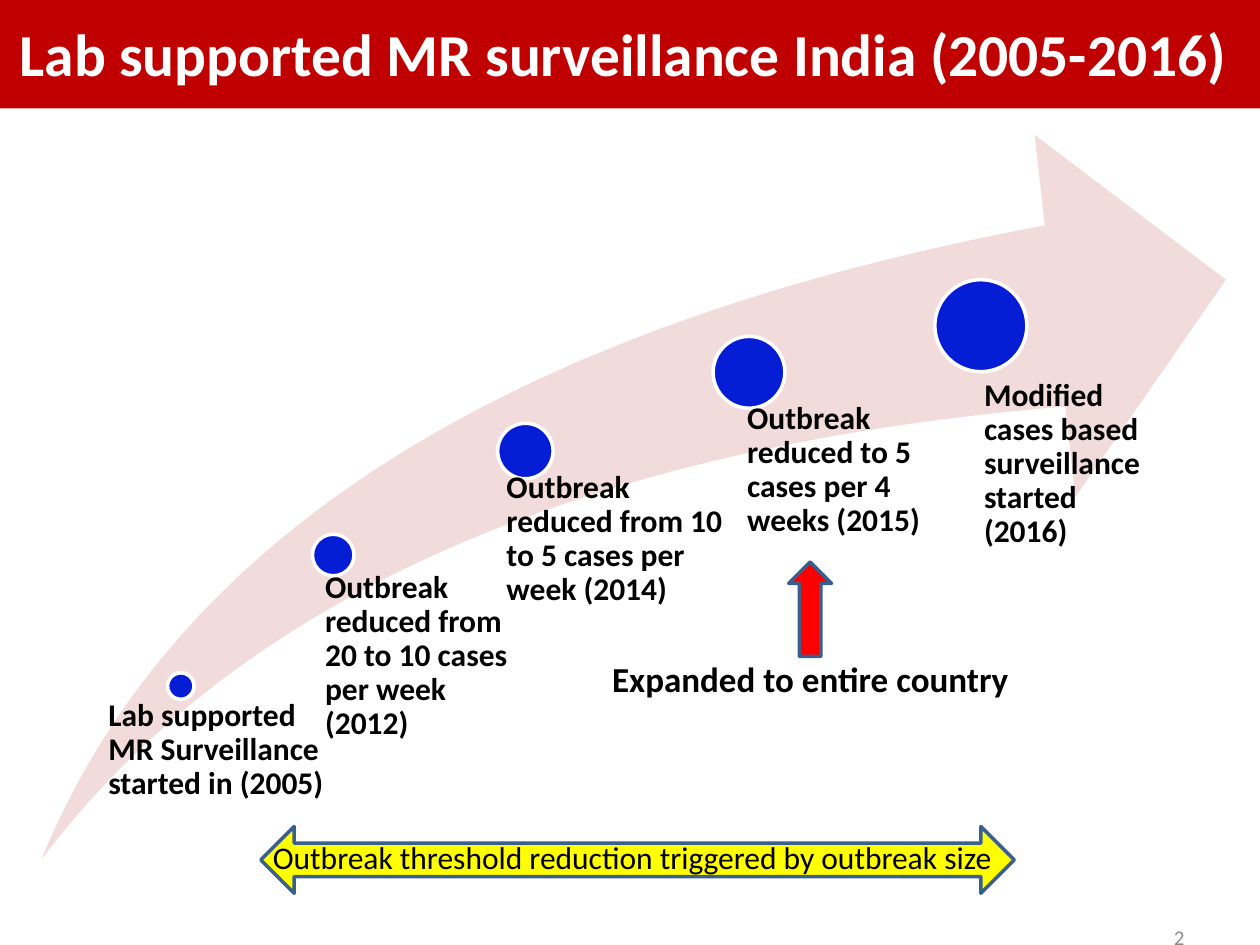
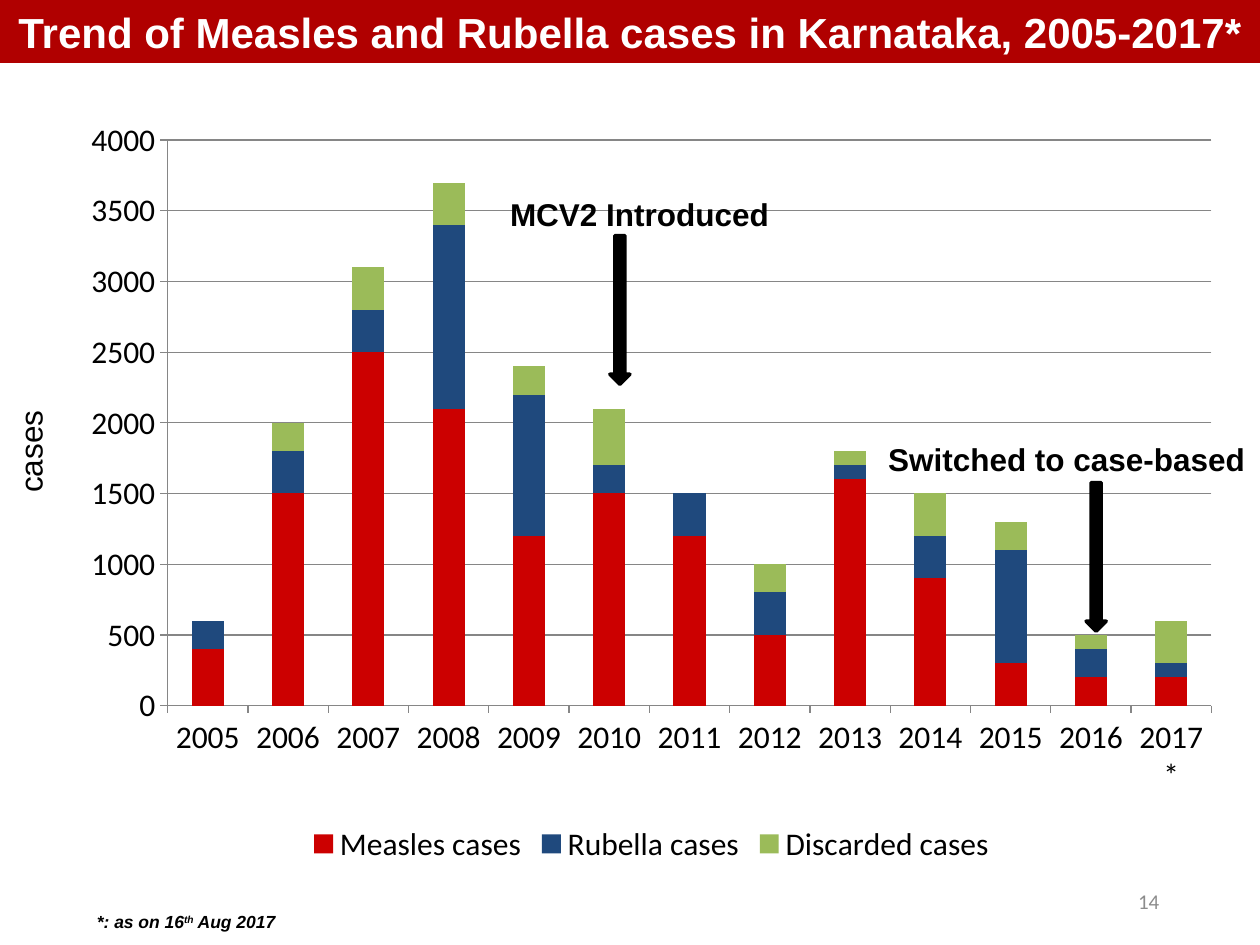
from typing import NamedTuple

from pptx import Presentation
from pptx.chart.data import CategoryChartData
from pptx.dml.color import RGBColor
from pptx.enum.chart import XL_CHART_TYPE, XL_LEGEND_POSITION, XL_TICK_MARK
from pptx.enum.shapes import MSO_SHAPE
from pptx.enum.text import MSO_ANCHOR, MSO_AUTO_SIZE, PP_ALIGN
from pptx.util import Emu, Pt

EMU_PER_PX = 9144  # 100 px to the inch
TITLE_ONLY = 5
BODY_FONT = "Calibri"
COLORS = {
    "white": "FFFFFF",
    "black": "000000",
    "title_red": "C00000",
    "title_dark_red": "B00000",
    "swoosh": "F2DCDB",
    "milestone": "051ED5",
    "arrow_red": "FF0000",
    "arrow_yellow": "FFFF00",
    "arrow_edge": "3A5F8C",
    "page_number": "8C8C8C",
    "grid": "868686",
    "measles": "CC0000",
    "rubella": "1F497D",
    "discarded": "9BBB59",
}


class Box(NamedTuple):
    left: int
    top: int
    width: int
    height: int


class Milestone(NamedTuple):
    text: str
    dot_left: int
    dot_top: int
    diameter: int
    label: Box
    inset: int


class CaseSeries(NamedTuple):
    name: str
    color: str
    values: tuple[int, ...]


class Event(NamedTuple):
    text: str
    label: Box
    arrow_left: int
    arrow_top: int


MILESTONES = [
    Milestone("Lab supported MR Surveillance started in (2005)",
              133, 534, 21, Box(75, 555, 184, 62), 11),
    Milestone("Outbreak reduced from 20 to 10 cases per week (2012)",
              248, 424, 33, Box(240, 453, 185, 85), 18),
    Milestone("Outbreak reduced from 10 to 5 cases per week (2014)",
              395, 336, 44, Box(379, 374, 204, 109), 23),
    Milestone("Outbreak reduced to 5 cases per 4 weeks (2015)",
              566, 267, 57, Box(563, 319, 184, 130), 30),
    Milestone("Modified cases based surveillance started (2016)",
              742, 222, 73, Box(742, 301, 184, 144), 39),
]
YEARS = [str(year) for year in range(2005, 2017)] + ["2017*"]
CASES = [
    CaseSeries("Measles cases", "measles",
               (400, 1500, 2500, 2100, 1200, 1500, 1200, 500, 1600, 900, 300, 200, 200)),
    CaseSeries("Rubella cases", "rubella",
               (200, 300, 300, 1300, 1000, 200, 300, 300, 100, 300, 800, 200, 100)),
    CaseSeries("Discarded cases", "discarded",
               (0, 200, 300, 300, 200, 400, 0, 200, 100, 300, 200, 100, 300)),
]
EVENTS = [
    Event("MCV2 Introduced", Box(395, 150, 244, 40), 484, 187),
    Event("Switched to case-based", Box(695, 344, 305, 40), 862, 383),
]


def px(length: int) -> Emu:
    return Emu(length * EMU_PER_PX)


def place(box: Box) -> tuple[Emu, ...]:
    return tuple(px(length) for length in box)


def color(name: str) -> RGBColor:
    return RGBColor.from_string(COLORS[name])


def write_text(shape, text: str, *, size: int = 18, font: str = BODY_FONT,
               ink: str = "black", bold: bool = False, italic: bool = False,
               align=PP_ALIGN.LEFT, anchor=MSO_ANCHOR.TOP, wrap: bool = True,
               spacing: float = 1.0, insets: tuple[int, ...] = (10, 5, 10, 5)) -> None:
    """Write one paragraph; text between carets is superscript."""
    frame = shape.text_frame
    frame.auto_size = MSO_AUTO_SIZE.NONE
    frame.word_wrap = wrap
    frame.vertical_anchor = anchor
    (frame.margin_left, frame.margin_top,
     frame.margin_right, frame.margin_bottom) = map(px, insets)
    paragraph = frame.paragraphs[0]
    paragraph.alignment = align
    paragraph.line_spacing = spacing
    for index, part in enumerate(text.split("^")):
        run = paragraph.add_run()
        run.text = part
        run.font.name = font
        run.font.size = Pt(size)
        run.font.bold = bold
        run.font.italic = italic
        run.font.color.rgb = color(ink)
        if index % 2:
            run._r.get_or_add_rPr().set("baseline", "30000")


def add_text(slide, box: Box, text: str, **text_format):
    shape = slide.shapes.add_textbox(*place(box))
    write_text(shape, text, **text_format)
    return shape


def add_figure(slide, kind, box: Box, fill: str, edge: str | None = None):
    shape = slide.shapes.add_shape(kind, *place(box))
    shape.shadow.inherit = False
    shape.fill.solid()
    shape.fill.fore_color.rgb = color(fill)
    if edge:
        shape.line.color.rgb = color(edge)
        shape.line.width = Pt(2)
    else:
        shape.line.fill.background()
    return shape


def add_titled_slide(presentation, title: str, band: Box, fill: str,
                     number: str, number_box: Box, **title_format):
    slide = presentation.slides.add_slide(presentation.slide_layouts[TITLE_ONLY])
    shape = slide.shapes.title
    shape.left, shape.top, shape.width, shape.height = place(band)
    shape.fill.solid()
    shape.fill.fore_color.rgb = color(fill)
    write_text(shape, title, ink="white", bold=True, align=PP_ALIGN.CENTER,
               anchor=MSO_ANCHOR.MIDDLE, **title_format)
    add_text(slide, number_box, number, size=12, ink="page_number",
             align=PP_ALIGN.RIGHT, anchor=MSO_ANCHOR.MIDDLE)
    return slide


def add_case_chart(slide, box: Box) -> None:
    chart_data = CategoryChartData()
    chart_data.categories = YEARS
    for series in CASES:
        chart_data.add_series(series.name, series.values)
    chart = slide.shapes.add_chart(
        XL_CHART_TYPE.COLUMN_STACKED, *place(box), chart_data).chart
    chart.font.name = BODY_FONT
    chart.font.size = Pt(18)
    chart.font.color.rgb = color("black")
    chart.has_title = False
    chart.has_legend = True
    chart.legend.position = XL_LEGEND_POSITION.BOTTOM
    chart.legend.include_in_layout = False

    plot = chart.plots[0]
    plot.gap_width = 150
    plot.overlap = 100
    plot.vary_by_categories = False
    for drawn, series in zip(plot.series, CASES):
        drawn.format.fill.solid()
        drawn.format.fill.fore_color.rgb = color(series.color)

    chart.value_axis.minimum_scale = 0
    chart.value_axis.maximum_scale = 4000
    chart.value_axis.major_unit = 500
    chart.value_axis.has_major_gridlines = True
    chart.value_axis.major_gridlines.format.line.color.rgb = color("grid")
    for axis in (chart.category_axis, chart.value_axis):
        axis.major_tick_mark = XL_TICK_MARK.OUTSIDE
        axis.format.line.color.rgb = color("grid")


def build_timeline_slide(presentation) -> None:
    slide = add_titled_slide(
        presentation, "Lab supported MR surveillance India (2005-2016) ",
        Box(0, -3, 1000, 89), "title_red", "2", Box(717, 724, 233, 40), size=34)

    # Rising arrow with its milestones
    swoosh = add_figure(slide, MSO_SHAPE.SWOOSH_ARROW, Box(33, 107, 940, 575), "swoosh")
    swoosh.adjustments[0] = swoosh.adjustments[1] = 0.25
    for milestone in MILESTONES:
        dot = Box(milestone.dot_left, milestone.dot_top,
                  milestone.diameter, milestone.diameter)
        add_figure(slide, MSO_SHAPE.OVAL, dot, "milestone", "white")
        add_text(slide, milestone.label, milestone.text, bold=True,
                 spacing=0.9, insets=(milestone.inset, 0, 0, 0))

    # Expansion note
    add_text(slide, Box(476, 517, 352, 44), "Expanded to entire country",
             size=20, bold=True)
    add_figure(slide, MSO_SHAPE.UP_ARROW, Box(626, 446, 34, 75),
               "arrow_red", "arrow_edge")

    # Threshold band
    add_figure(slide, MSO_SHAPE.LEFT_RIGHT_ARROW, Box(207, 656, 598, 53),
               "arrow_yellow", "arrow_edge")
    add_text(slide, Box(199, 660, 606, 40),
             "Outbreak threshold reduction triggered by outbreak size",
             align=PP_ALIGN.CENTER)


def build_trend_slide(presentation) -> None:
    slide = add_titled_slide(
        presentation, "Trend of Measles and Rubella cases in Karnataka, 2005-2017*",
        Box(0, 0, 1000, 50), "title_dark_red", "14", Box(697, 695, 233, 40),
        size=24, font="Arial", insets=(0, 5, 0, 5))
    add_case_chart(slide, Box(54, 84, 926, 606))

    # Programme events
    for event in EVENTS:
        add_figure(slide, MSO_SHAPE.DOWN_ARROW,
                   Box(event.arrow_left, event.arrow_top, 16, 118), "black", "black")
        add_text(slide, event.label, event.text, font="Arial", bold=True)

    # Footnote and axis caption
    add_text(slide, Box(67, 718, 165, 27), "*: as on 16^th^ Aug 2017",
             size=10, font="Arial", bold=True, italic=True, wrap=False)
    caption = add_text(slide, Box(4, 325, 50, 76), "cases", font="Arial", wrap=False)
    caption.text_frame._txBody.bodyPr.set("vert", "vert270")


def main() -> None:
    presentation = Presentation()
    presentation.slide_width = px(1000)
    presentation.slide_height = px(750)
    build_timeline_slide(presentation)
    build_trend_slide(presentation)
    presentation.save("out.pptx")


if __name__ == "__main__":
    main()
